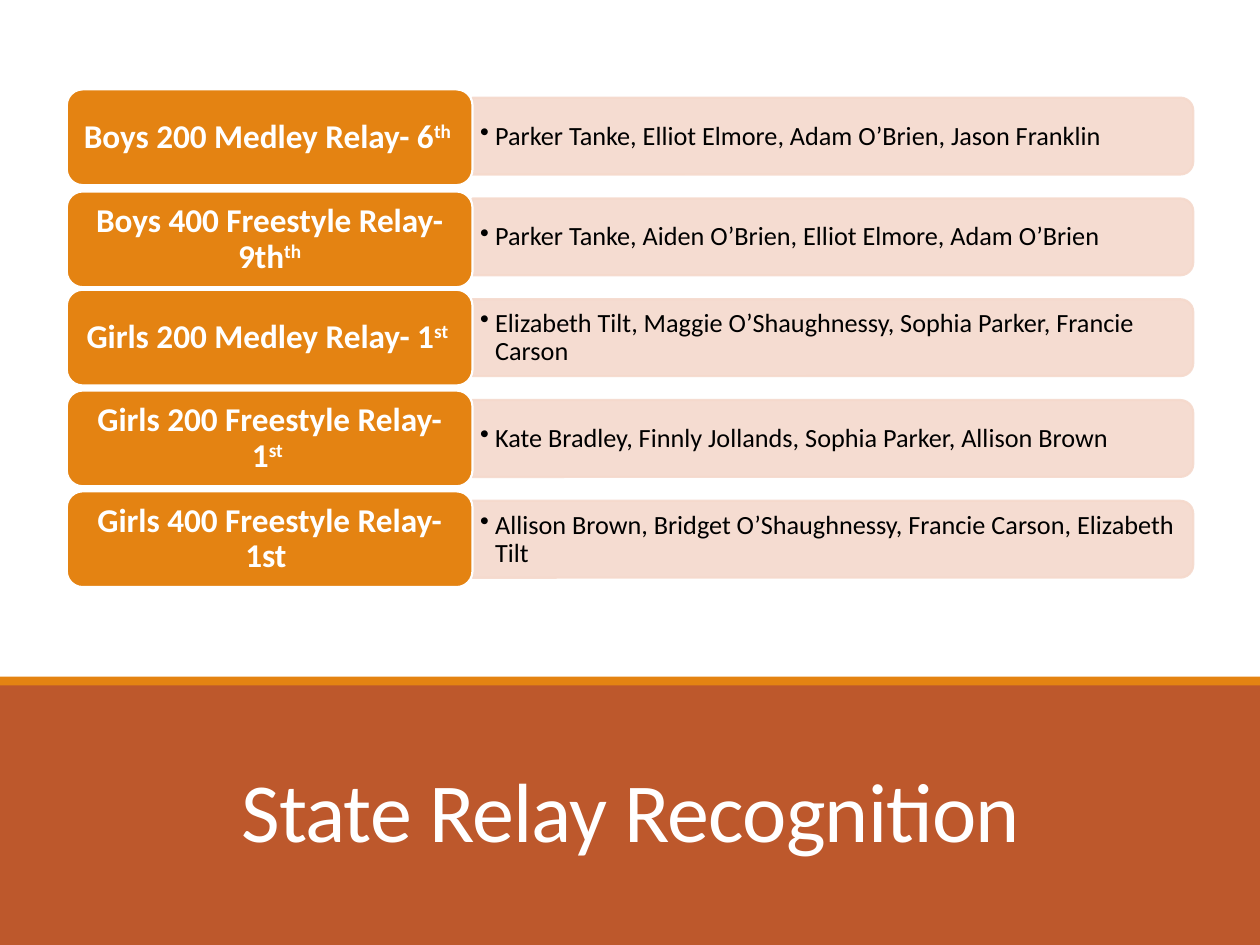
import pptx
import pptx.dml.color
import pptx.enum.shapes
import pptx.enum.text
import pptx.oxml.ns
import pptx.util
import lxml.etree
from pptx.util import Inches

RGBColor = pptx.dml.color.RGBColor
RUST = RGBColor(0xBD, 0x58, 0x2C)
ORANGE = RGBColor(0xE4, 0x83, 0x12)
BLUSH = RGBColor(0xF5, 0xD9, 0xCC)
WHITE = RGBColor(0xFF, 0xFF, 0xFF)
BLACK = RGBColor(0, 0, 0)
SHAPE = pptx.enum.shapes.MSO_SHAPE
ANCHOR = pptx.enum.text.MSO_ANCHOR
CENTER = pptx.enum.text.PP_ALIGN.CENTER

ROW_PITCH = 0.8
RELAYS = [
    (0.71, "Boys 200 Medley Relay- 6", "th ",
     "Parker Tanke, Elliot Elmore, Adam O’Brien, Jason Franklin"),
    (1.52, "Boys 400 Freestyle Relay- 9th", "th",
     "Parker Tanke, Aiden O’Brien, Elliot Elmore, Adam O’Brien"),
    (2.3, "Girls 200 Medley Relay- 1", "st ",
     "Elizabeth Tilt, Maggie O’Shaughnessy, Sophia Parker, Francie Carson"),
    (3.1, "Girls 200 Freestyle Relay- 1", "st ",
     "Kate Bradley, Finnly Jollands, Sophia Parker, Allison Brown"),
    (3.9, "Girls 400 Freestyle Relay- 1st ", "",
     "Allison Brown, Bridget O’Shaughnessy, Francie Carson, Elizabeth Tilt"),
]


def add_shape(slide, kind, left, top, width, height, fill, line=None):
    shape = slide.shapes.add_shape(
        kind, Inches(left), Inches(top), Inches(width), Inches(height))
    shape.shadow.inherit = False
    shape.fill.solid()
    shape.fill.fore_color.rgb = fill
    if line is None:
        shape.line.fill.background()
    else:
        shape.line.color.rgb = line
        shape.line.width = pptx.util.Pt(1.25)
    return shape


def set_frame(frame, anchor, horizontal, vertical):
    frame.word_wrap = True
    frame.auto_size = pptx.enum.text.MSO_AUTO_SIZE.NONE
    frame.vertical_anchor = anchor
    frame.margin_left = frame.margin_right = Inches(horizontal)
    frame.margin_top = frame.margin_bottom = Inches(vertical)


def add_run(paragraph, text, size, color, bold=False):
    run = paragraph.add_run()
    run.text = text
    run.font.name = "Calibri"
    run.font.size = pptx.util.Pt(size)
    run.font.color.rgb = color
    run.font.bold = bold
    return run


def add_swimmer_bar(slide, top):
    length, thickness = 5.72, 0.61
    center_x, center_y = 6.61, top + 0.27
    bar = add_shape(slide, SHAPE.ROUND_2_SAME_RECTANGLE,
                    center_x - thickness / 2, center_y - length / 2,
                    thickness, length, BLUSH, BLUSH)
    bar.rotation = 90
    for color in bar._element.spPr.iter(pptx.oxml.ns.qn("a:srgbClr")):
        lxml.etree.SubElement(color, pptx.oxml.ns.qn("a:alpha"), val="90000")


def add_swimmer_names(slide, top, names):
    box = slide.shapes.add_textbox(
        Inches(3.75), Inches(top), Inches(5.69), Inches(0.55))
    set_frame(box.text_frame, ANCHOR.MIDDLE, 0.06, 0.03)
    paragraph = box.text_frame.paragraphs[0]
    paragraph.line_spacing = 0.9
    properties = paragraph._p.get_or_add_pPr()
    properties.set("marL", str(Inches(0.12)))
    properties.set("indent", str(Inches(-0.12)))
    lxml.etree.SubElement(properties, pptx.oxml.ns.qn("a:buChar"), char="•")
    add_run(paragraph, names, 15, BLACK)


def add_relay_label(slide, top, relay, suffix):
    label = add_shape(slide, SHAPE.ROUNDED_RECTANGLE, 0.53, top, 3.22, 0.76,
                      ORANGE, WHITE)
    set_frame(label.text_frame, ANCHOR.MIDDLE, 0.08, 0.04)
    paragraph = label.text_frame.paragraphs[0]
    paragraph.alignment = CENTER
    paragraph.line_spacing = 0.9
    add_run(paragraph, relay, 19, WHITE, bold=True)
    if suffix:
        run = add_run(paragraph, suffix, 19, WHITE, bold=True)
        run._r.get_or_add_rPr().set("baseline", "30000")


def place_title(slide, text):
    title = slide.shapes.title
    title.left, title.top = Inches(0.88), Inches(5.74)
    title.width, title.height = Inches(8.25), Inches(1.13)
    slide.shapes._spTree.append(title._element)
    set_frame(title.text_frame, ANCHOR.BOTTOM, 0.1, 0.05)
    paragraph = title.text_frame.paragraphs[0]
    paragraph.alignment = CENTER
    paragraph.line_spacing = 0.85
    run = add_run(paragraph, text, 48, WHITE)
    run._r.get_or_add_rPr().set("spc", "-50")


def main():
    presentation = pptx.Presentation()
    presentation.slide_width = Inches(10)
    presentation.slide_height = Inches(7.5)
    slide = presentation.slides.add_slide(presentation.slide_layouts[5])

    add_shape(slide, SHAPE.RECTANGLE, 0, 5.42, 10, 2.08, RUST)
    place_title(slide, "State Relay Recognition")
    add_shape(slide, SHAPE.RECTANGLE, 0, 5.37, 10, 0.07, ORANGE)

    for row, (label_top, relay, suffix, names) in enumerate(RELAYS):
        names_top = 0.81 + row * ROW_PITCH
        add_swimmer_bar(slide, names_top)
        add_swimmer_names(slide, names_top, names)
        add_relay_label(slide, label_top, relay, suffix)

    presentation.save("out.pptx")


if __name__ == "__main__":
    main()
